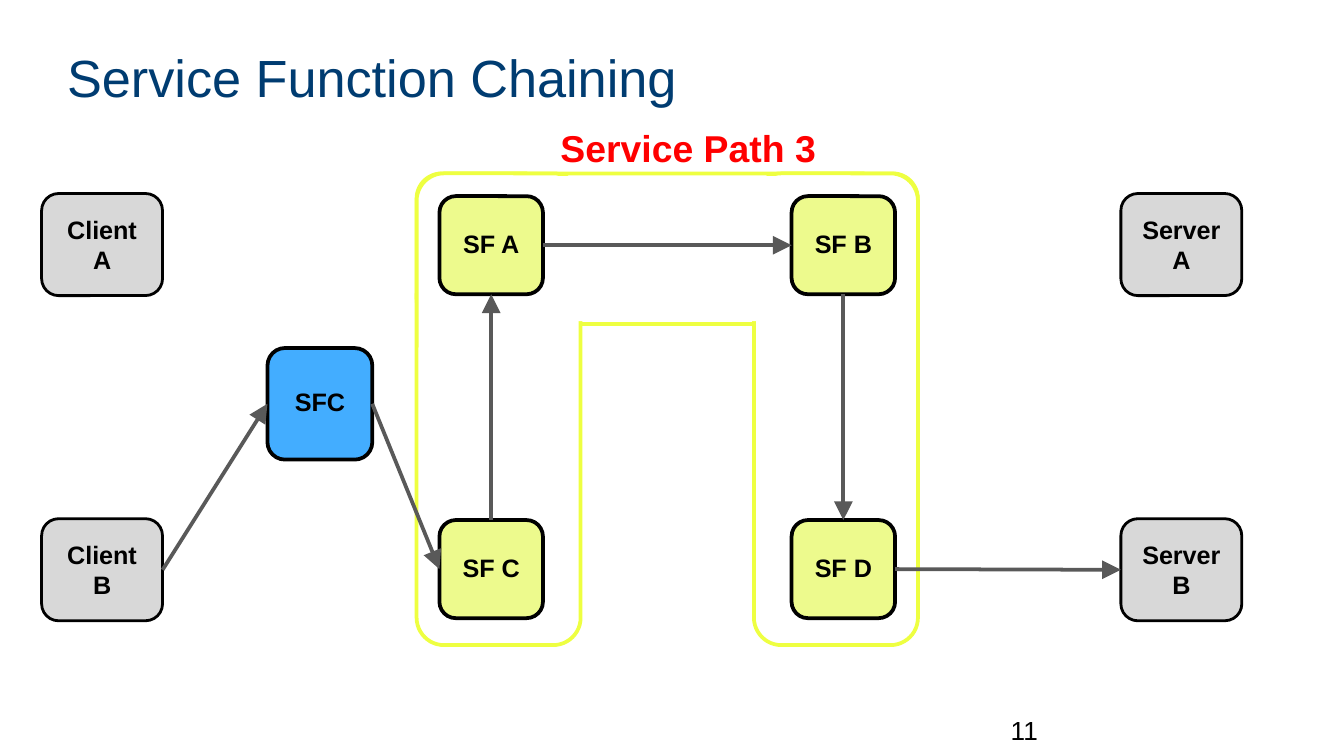
import pptx
import pptx.util
import pptx.dml.color
import pptx.enum.shapes
import pptx.enum.text
import pptx.oxml
import pptx.oxml.ns

Inches = pptx.util.Inches
Pt = pptx.util.Pt
MIDDLE = pptx.enum.text.MSO_ANCHOR.MIDDLE
TOP_ANCHOR = pptx.enum.text.MSO_ANCHOR.TOP
CENTER = pptx.enum.text.PP_ALIGN.CENTER

COLORS = {
    "white": "FFFFFF", "black": "000000", "title": "003C71", "path": "FF0000",
    "band": "EEFF41", "host": "D8D8D8", "function": "EDFA8D",
    "classifier": "43ADFF", "arrow": "595959",
}
TOP, LEFT, BOTTOM, RIGHT = range(4)
HOST = {"size": (0.9, 0.76), "fill": "host", "line": 1.5,
        "insets": (0.1, 0.05), "spacing": 1.0}
FUNCTION = {"size": (0.77, 0.73), "fill": "function", "line": 2,
            "insets": (0.03, 0), "spacing": 0.9}
CLASSIFIER = {**FUNCTION, "size": (0.78, 0.83), "fill": "classifier"}


def rgb(name):
    return pptx.dml.color.RGBColor.from_string(COLORS[name])


def write(sp, lines, size, color, bold=False, insets=(0, 0), anchor=TOP_ANCHOR,
          align=None, spacing=None):
    tf = sp.text_frame
    dx, dy = map(Inches, insets)
    frame_format = {"word_wrap": True, "vertical_anchor": anchor,
                    "margin_left": dx, "margin_right": dx,
                    "margin_top": dy, "margin_bottom": dy}
    for name, value in frame_format.items():
        setattr(tf, name, value)
    font_format = {"name": "Arial", "size": Pt(size), "bold": bold}
    for i, line in enumerate(lines):
        p = tf.add_paragraph() if i else tf.paragraphs[0]
        p.alignment = align
        p.line_spacing = spacing
        r = p.add_run()
        r.text = line
        for name, value in font_format.items():
            setattr(r.font, name, value)
        r.font.color.rgb = rgb(color)


def add_label(s, box, text, **text_format):
    sp = s.shapes.add_textbox(*map(Inches, box))
    write(sp, [text], **text_format)


def add_rounded(s, box, fill, line=None, width=2):
    sp = s.shapes.add_shape(pptx.enum.shapes.MSO_SHAPE.ROUNDED_RECTANGLE,
                            *map(Inches, box))
    sp.adjustments[0] = 0.167
    sp.shadow.inherit = False
    sp.fill.solid()
    sp.fill.fore_color.rgb = rgb(fill)
    if line:
        sp.line.color.rgb = rgb(line)
        sp.line.width = Pt(width)
    else:
        sp.line.fill.background()
    return sp


def add_node(s, x, y, lines, style):
    sp = add_rounded(s, (x, y, *style["size"]), style["fill"], "black", style["line"])
    write(sp, lines, 13.5, "black", bold=True, insets=style["insets"],
          anchor=MIDDLE, align=CENTER, spacing=style["spacing"])
    return sp


def add_arrow(s, start, start_side, end, end_side):
    c = s.shapes.add_connector(pptx.enum.shapes.MSO_CONNECTOR.STRAIGHT, 0, 0, 0, 0)
    c.begin_connect(start, start_side)
    c.end_connect(end, end_side)
    c.line.color.rgb = rgb("arrow")
    c.line.width = Pt(2)
    ns = pptx.oxml.ns.nsdecls("a")
    ln = c.element.spPr.find(pptx.oxml.ns.qn("a:ln"))
    ln.append(pptx.oxml.parse_xml(
        f'<a:tailEnd {ns} type="triangle" w="lg" len="lg"/>'))
    ln.addnext(pptx.oxml.parse_xml(f"<a:effectLst {ns}/>"))


def service_band(s, x, y, w, h):
    """Arch outline: a beam and two legs, with covers hiding the inner joints."""
    leg, beam, inset = 1.22, 1.12, 0.02
    cover_w, cover_h = 1.33, beam - 2 * inset
    add_rounded(s, (x, y, w, beam), "white", "band")
    for leg_x, cover_x in ((x + w - leg, x + 2.3), (x, x + 0.5)):
        add_rounded(s, (leg_x, y, leg, h), "white", "band")
        add_rounded(s, (cover_x, y + inset, cover_w, cover_h), "white")


def service_chain(s, x, y, w, h):
    """Hosts in the corners, service functions between them, and the traffic path."""
    nodes = {}
    host_w, host_h = HOST["size"]
    for side, host_x in (("Client", x), ("Server", x + w - host_w)):
        for letter, host_y in (("A", y), ("B", y + h - host_h)):
            lines = [side, letter] if side == "Client" else [f"{side} {letter}"]
            nodes[" ".join(lines)] = add_node(s, host_x, host_y, lines, HOST)
    for i, letter in enumerate("ABCD"):
        row, col = divmod(i, 2)
        name = f"SF {letter}"
        nodes[name] = add_node(s, x + 2.96 + 2.62 * col, y + 0.02 + 2.41 * row,
                               [name], FUNCTION)
    nodes["SFC"] = add_node(s, x + 1.68, y + 1.15, ["SFC"], CLASSIFIER)

    hops = [("Client B", RIGHT, "SFC", LEFT), ("SFC", RIGHT, "SF C", LEFT),
            ("SF C", TOP, "SF A", BOTTOM), ("SF A", RIGHT, "SF B", LEFT),
            ("SF B", BOTTOM, "SF D", TOP), ("SF D", RIGHT, "Server B", LEFT)]
    for start, start_side, end, end_side in hops:
        add_arrow(s, nodes[start], start_side, nodes[end], end_side)


def main():
    prs = pptx.Presentation()
    prs.slide_width = Inches(10)
    prs.slide_height = prs.slide_width * 9 // 16
    s = prs.slides.add_slide(prs.slide_layouts[6])
    service_band(s, 3.1, 1.29, 3.73, 3.51)
    add_label(s, (7.52, 5.28, 2.33, 0.3), "11", size=14, color="black", anchor=MIDDLE)
    add_label(s, (0.5, 0.34, 9, 0.95), "Service Function Chaining",
              size=28, color="title")
    service_chain(s, 0.31, 1.44, 8.93, 3.18)
    add_label(s, (4.17, 0.93, 2.56, 0.36), "Service Path 3",
              size=20, color="path", bold=True)
    prs.save("out.pptx")


if __name__ == "__main__":
    main()
